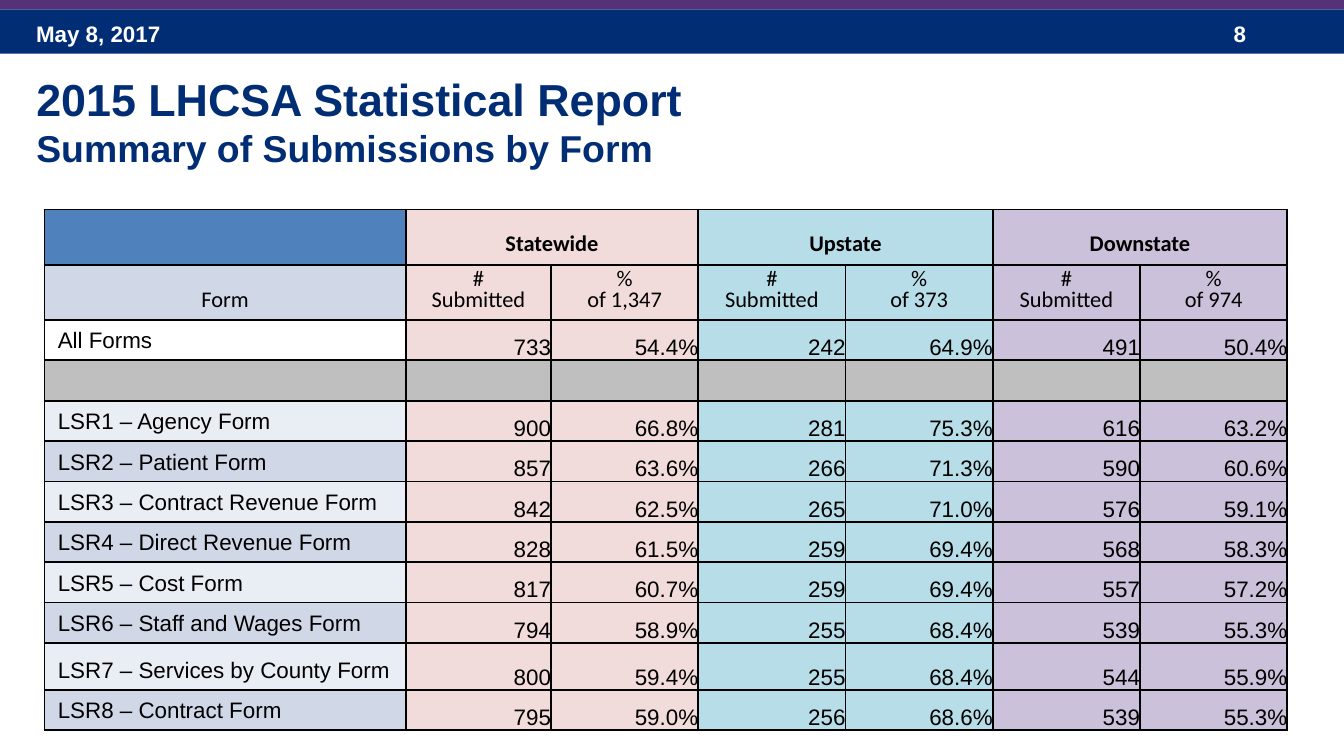
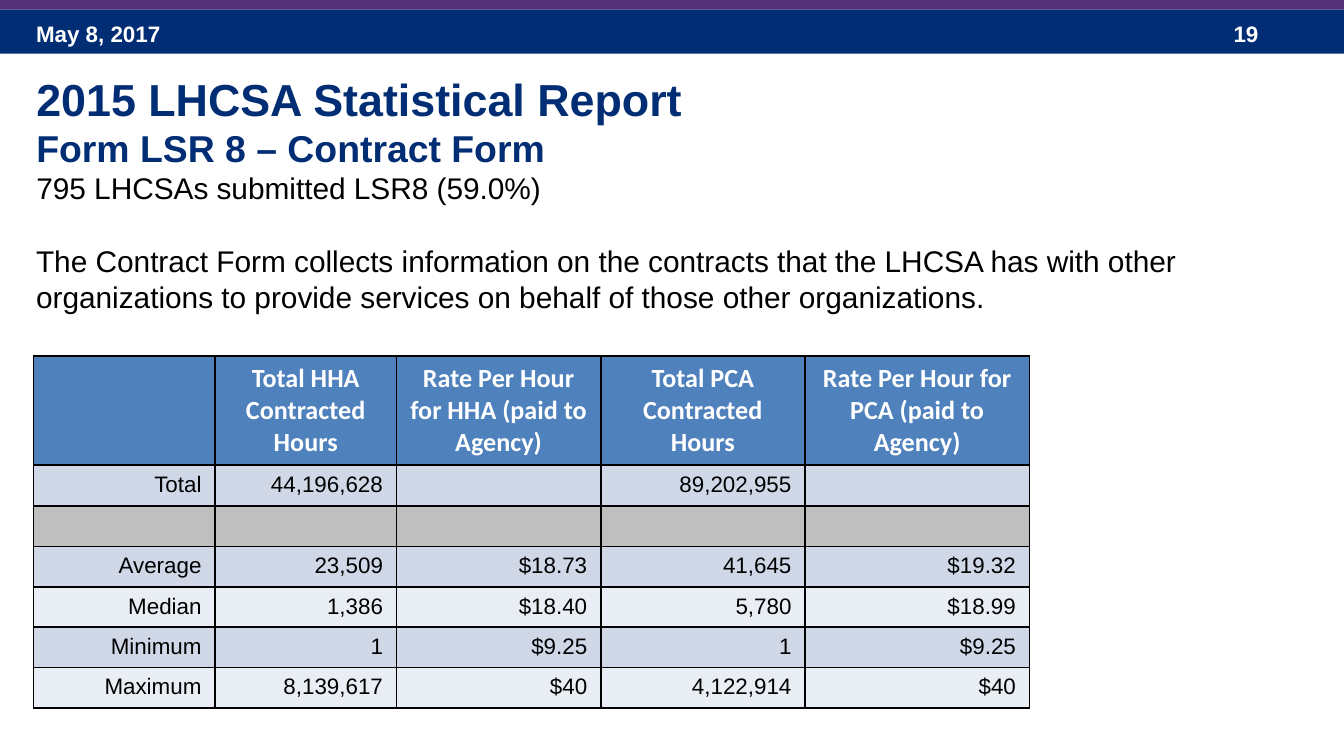
from dataclasses import dataclass

from lxml.etree import SubElement
from pptx import Presentation
from pptx.dml.color import RGBColor
from pptx.enum.shapes import MSO_SHAPE
from pptx.enum.text import MSO_ANCHOR, MSO_AUTO_SIZE, PP_ALIGN
from pptx.oxml import parse_xml
from pptx.oxml.ns import nsdecls, qn
from pptx.util import Inches, Pt


@dataclass(frozen=True)
class Theme:
    width: float = 10
    height: float = 10 * 9 / 16
    margin: float = 0.17
    navy: str = "002D73"
    purple: str = "553278"
    white: str = "FFFFFF"
    black: str = "000000"
    blue: str = "4F81BD"
    band_dark: str = "D0D8E8"
    band_light: str = "E9EDF4"
    gray: str = "BFBFBF"
    pink: str = "F2DCDB"
    aqua: str = "B7DEE8"
    lilac: str = "CCC1DA"
    title_size: int = 24
    subtitle_size: int = 20
    body_size: int = 16
    heading_size: int = 14
    small_size: int = 12
    body_font: str = "Arial"
    heading_font: str = "Calibri"


THEME = Theme()
DATE = "May 8, 2017"
REPORT = "2015 LHCSA Statistical Report"

REGIONS = [("Statewide", "1,347", THEME.pink),
           ("Upstate", "373", THEME.aqua),
           ("Downstate", "974", THEME.lilac)]
SUBMISSIONS = [
    ("All Forms", "733", "54.4%", "242", "64.9%", "491", "50.4%"),
    ("",) * 7,
    ("LSR1 – Agency Form", "900", "66.8%", "281", "75.3%", "616", "63.2%"),
    ("LSR2 – Patient Form", "857", "63.6%", "266", "71.3%", "590", "60.6%"),
    ("LSR3 – Contract Revenue Form", "842", "62.5%", "265", "71.0%", "576", "59.1%"),
    ("LSR4 – Direct Revenue Form", "828", "61.5%", "259", "69.4%", "568", "58.3%"),
    ("LSR5 – Cost Form", "817", "60.7%", "259", "69.4%", "557", "57.2%"),
    ("LSR6 – Staff and Wages Form", "794", "58.9%", "255", "68.4%", "539", "55.3%"),
    ("LSR7 – Services by County Form", "800", "59.4%", "255", "68.4%", "544", "55.9%"),
    ("LSR8 – Contract Form", "795", "59.0%", "256", "68.6%", "539", "55.3%"),
]
SUBMISSION_WIDTH = 9.25
SUBMISSION_COLUMNS = [2.69, 1.08] + [(SUBMISSION_WIDTH - 2.69 - 1.08) / 5] * 5
SUBMISSION_ROWS = [0.41] * 2 + [0.3] * 8 + [0.35, 0.3]

CONTRACT_NOTE = ("The Contract Form collects information on the contracts that the LHCSA "
                 "has with other organizations to provide services on behalf of those "
                 "other organizations.")
CONTRACTS = [
    ("", "Total HHA Contracted Hours", "Rate Per Hour for HHA (paid to Agency)",
     "Total PCA Contracted Hours", "Rate Per Hour for PCA (paid to Agency)"),
    ("Total", "44,196,628", "", "89,202,955", ""),
    ("",) * 5,
    ("Average", "23,509", "$18.73", "41,645", "$19.32"),
    ("Median", "1,386", "$18.40", "5,780", "$18.99"),
    ("Minimum", "1", "$9.25", "1", "$9.25"),
    ("Maximum", "8,139,617", "$40", "4,122,914", "$40"),
]
CONTRACT_COLUMNS = [1.35, 1.35, 1.52, 1.52, 1.67]
CONTRACT_ROWS = [0.8] + [0.3] * 6
CONTRACT_FILLS = [THEME.blue, THEME.band_dark, THEME.gray] + [THEME.band_dark, THEME.band_light] * 2


def set_attributes(target, values):
    for name, value in values.items():
        setattr(target, name, value)


def set_font(font, size=THEME.small_size, name=THEME.body_font, color=THEME.black, bold=False):
    set_attributes(font, {"size": Pt(size), "name": name, "bold": bold})
    font.color.rgb = RGBColor.from_string(color)


def set_frame(shape, place):
    set_attributes(shape, dict(zip(("left", "top", "width", "height"), map(Inches, place))))


def write_lines(frame, lines):
    """Fill a text frame with (text, font values) lines, one paragraph each."""
    set_attributes(frame, {"word_wrap": True, "auto_size": MSO_AUTO_SIZE.NONE,
                           "vertical_anchor": MSO_ANCHOR.TOP})
    frame.text = "\n".join(text for text, _ in lines)
    for para, (_, style) in zip(frame.paragraphs, lines):
        para.alignment = PP_ALIGN.LEFT
        set_font(para.runs[0].font, **style)


def add_text(page, place, text, **style):
    box = page.shapes.add_textbox(*map(Inches, place))
    write_lines(box.text_frame, [(text, style)])


def add_band(page, top, height, color):
    band = page.shapes.add_shape(MSO_SHAPE.RECTANGLE, 0, Inches(top),
                                 Inches(THEME.width), Inches(height))
    band.shadow.inherit = False
    band.fill.solid()
    band.fill.fore_color.rgb = RGBColor.from_string(color)
    band.line.fill.background()


def add_page(deck, number, subtitle, title_height, detail=None):
    page = deck.slides.add_slide(deck.slide_layouts[5])
    add_band(page, 0.07, 0.33, THEME.navy)
    add_band(page, 0, 0.07, THEME.purple)
    for left, width, text in [(THEME.margin, 2.33, DATE), (9.08, 0.75, number)]:
        add_text(page, (left, 0.1, width, 0.3), text, color=THEME.white, bold=True)
    heading = {"color": THEME.navy, "bold": True}
    lines = [(REPORT, {"size": THEME.title_size, **heading}),
             (subtitle, {"size": THEME.subtitle_size, **heading})]
    if detail:
        lines.append((detail, {"size": THEME.body_size}))
    set_frame(page.shapes.title, (THEME.margin, 0.48, 9.5, title_height))
    write_lines(page.shapes.title.text_frame, lines)
    return page


def add_grid(page, left, top, columns, rows):
    place = map(Inches, (left, top, sum(columns), sum(rows)))
    table = page.shapes.add_table(len(rows), len(columns), *place).table
    table.horz_banding = False
    for column, width in zip(table.columns, columns):
        column.width = Inches(width)
    for row, height in zip(table.rows, rows):
        row.height = Inches(height)
    return table


def add_borders(cell):
    properties = cell._tc.get_or_add_tcPr()
    for index, side in enumerate("LRTB"):
        properties.insert(index, parse_xml(
            f'<a:ln{side} {nsdecls("a")} w="12700"><a:solidFill>'
            f'<a:srgbClr val="{THEME.black}"/></a:solidFill></a:ln{side}>'))


def fill_cell(cell, text, fill, align, layout=None, spacing=None, **style):
    """Write a bordered cell; layout holds cell attributes such as margins."""
    add_borders(cell)
    cell.fill.solid()
    cell.fill.fore_color.rgb = RGBColor.from_string(fill)
    set_attributes(cell, layout or {})
    cell.text = text
    for para in cell.text_frame.paragraphs:
        para.alignment = align
        if spacing:
            para.line_spacing = Pt(spacing)
        for span in para.runs:
            set_font(span.font, **style)
        if not para.runs:  # keeps an empty row from growing
            SubElement(para._p, qn("a:endParaRPr"), sz=str(THEME.small_size * 100))


def add_submission_table(page):
    table = add_grid(page, 0.33, 1.56, SUBMISSION_COLUMNS, SUBMISSION_ROWS)
    bottom = {"vertical_anchor": MSO_ANCHOR.BOTTOM}
    flush = bottom | dict.fromkeys(
        ("margin_left", "margin_right", "margin_top", "margin_bottom"), 0)
    heading = {"align": PP_ALIGN.CENTER, "layout": bottom, "spacing": 11,
               "name": THEME.heading_font}

    fill_cell(table.cell(0, 0), "", THEME.blue, **heading)
    fill_cell(table.cell(1, 0), "Form", THEME.band_dark, **heading)
    for index, (region, total, color) in enumerate(REGIONS):
        first = 1 + 2 * index
        for column, label, text in [(first, region, "#\nSubmitted"),
                                    (first + 1, "", f"%\nof {total}")]:
            fill_cell(table.cell(0, column), label, color, bold=True, **heading)
            fill_cell(table.cell(1, column), text, color, **heading)
        table.cell(0, first).merge(table.cell(0, first + 1))

    for row, values in enumerate(SUBMISSIONS, start=2):
        band = THEME.white if row == 2 else (THEME.band_light, THEME.band_dark)[row % 2]
        for column, value in enumerate(values):
            color = REGIONS[(column - 1) // 2][2] if column else band
            fill_cell(table.cell(row, column), value, color if values[0] else THEME.gray,
                      PP_ALIGN.RIGHT if column else PP_ALIGN.LEFT,
                      flush if column and value else bottom, 11)


def add_contract_table(page):
    table = add_grid(page, 0.25, 2.65, CONTRACT_COLUMNS, CONTRACT_ROWS)
    heading = {"align": PP_ALIGN.CENTER, "size": THEME.heading_size,
               "name": THEME.heading_font, "color": THEME.white, "bold": True}
    for row, (values, fill) in enumerate(zip(CONTRACTS, CONTRACT_FILLS)):
        style = {"align": PP_ALIGN.RIGHT} if row else heading
        for column, value in enumerate(values):
            fill_cell(table.cell(row, column), value, fill, **style)


def main():
    deck = Presentation()
    set_attributes(deck, {"slide_width": Inches(THEME.width),
                          "slide_height": Inches(THEME.height)})
    deck.element.sldSz.attrib.pop("type", None)  # the default deck is marked 4:3
    page = add_page(deck, "8", "Summary of Submissions by Form", 0.84)
    add_submission_table(page)

    page = add_page(deck, "19", "Form LSR 8 – Contract Form", 1.11,
                    "795 LHCSAs submitted LSR8 (59.0%)")
    add_text(page, (THEME.margin, 1.76, 9.58, 0.64), CONTRACT_NOTE, size=THEME.body_size)
    add_contract_table(page)
    deck.save("out.pptx")


if __name__ == "__main__":
    main()
